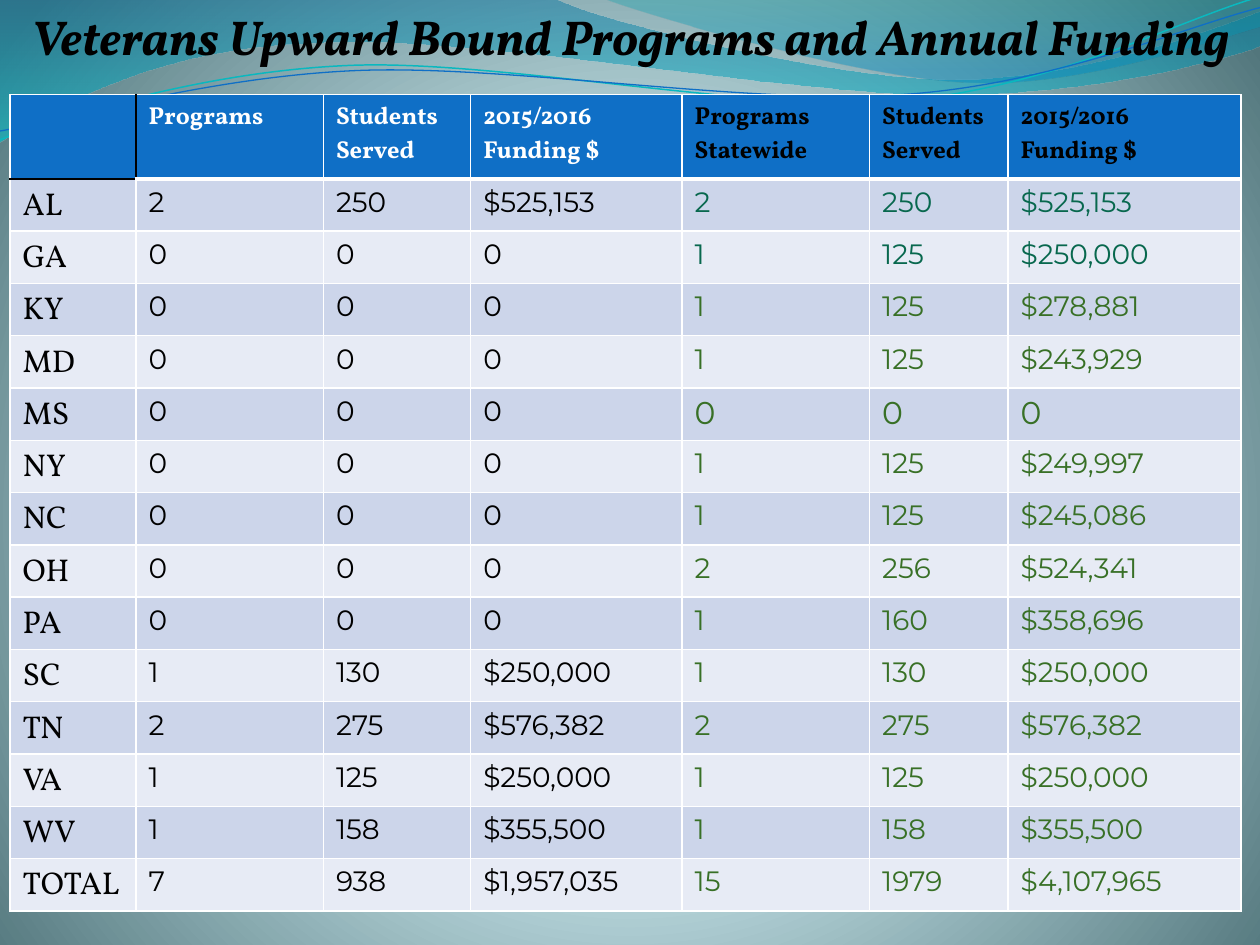
from math import cos, radians, sin

from lxml import etree
from pptx import Presentation
from pptx.dml.color import RGBColor
from pptx.enum.text import PP_ALIGN
from pptx.oxml import parse_xml
from pptx.oxml.ns import nsdecls, qn
from pptx.util import Inches, Pt

CENTER = PP_ALIGN.CENTER
LEFT = PP_ALIGN.LEFT
WIDTH, HEIGHT = 10, 7.5
SERIF, SANS = "Vollkorn", "Montserrat"
BLACK, WHITE, BLUE = "000000", "FFFFFF", "0F6FC6"
BANDS = ("CCD5EA", "E7EBF5")
TEAL, GREEN = "08684E", "387026"
LINE_TILT = 357.3

COLUMNS = (1, 1.49, 1.17, 1.68, 1.49, 1.1, 1.85)
HEADER_SHARE = 0.67 / 6.48
HEADINGS = ("", "Programs", "Students\nServed", "2015/2016\nFunding $",
            "Programs\nStatewide", "Students\nServed", "2015/2016\nFunding $")
STATES = (
    ("AL", "2", "250", "$525,153", "2", "250", "$525,153"),
    ("GA", "0", "0", "0", "1", "125", "$250,000"),
    ("KY", "0", "0", "0", "1", "125", "$278,881"),
    ("MD", "0", "0", "0", "1", "125", "$243,929"),
    ("MS", "0", "0", "0", "0", "0", "0"),
    ("NY", "0", "0", "0", "1", "125", "$249,997"),
    ("NC", "0", "0", "0", "1", "125", "$245,086"),
    ("OH", "0", "0", "0", "2", "256", "$524,341"),
    ("PA", "0", "0", "0", "1", "160", "$358,696"),
    ("SC", "1", "130", "$250,000", "1", "130", "$250,000"),
    ("TN", "2", "275", "$576,382", "2", "275", "$576,382"),
    ("VA", "1", "125", "$250,000", "1", "125", "$250,000"),
    ("WV", "1", "158", "$355,500", "1", "158", "$355,500"),
    ("TOTAL", "7", "938", "$1,957,035", "15", "1979", "$4,107,965"),
)

LEFT_WAVE = ((0, 0), (4.4, -0.01),
             (4.76, 0.17, 6.64, 0.63, 7.58, 0.63), (8.53, 0.63, 9.58, 0.26, 10, 0.09),
             (10.01, 0.36), (9.83, 0.44, 8.7, 0.76, 7.46, 0.75),
             (6.22, 0.75, 3.82, 0.28, 2.57, 0.34), (1.29, 0.36, 0.46, 0.83, -0.01, 1.13),
             (0, 0))
RIGHT_WAVE = ((4.79, -0.01), (5.09, 0.11, 6.82, 0.62, 7.69, 0.65),
              (8.56, 0.69, 9.61, 0.32, 10, 0.21), (10, 0), (4.79, -0.01))
TEAL_LINE = ((0, 1.11), (0.48, 0.93, 1.58, 0.57, 2.77, 0.52),
             (3.95, 0.47, 5.93, 0.89, 7.13, 0.8), (8.33, 0.71, 9.38, 0.15, 9.98, -0.02))
BLUE_LINE = ((0, 1.04), (0.47, 0.96, 1.64, 0.61, 2.83, 0.56),
             (4.03, 0.51, 5.97, 0.84, 7.17, 0.75), (8.36, 0.67, 9.41, 0.21, 10, 0.06))


def color(value):
    """Turn a hex string into a colour."""
    return RGBColor.from_string(value)


def set_gradient(fill, element, stops, direction):
    """Give a fill gradient stops of position, colour and opacity in percent."""
    fill.gradient()
    stop_xml = "".join(
        f'<a:gs pos="{position * 1000}"><a:srgbClr val="{value}">'
        f'<a:alpha val="{opacity * 1000}"/></a:srgbClr></a:gs>'
        for position, value, opacity in stops)
    old = next(element.iter(qn("a:gradFill")))
    new = parse_xml(f'<a:gradFill {nsdecls("a")} rotWithShape="1">'
                    f'<a:gsLst>{stop_xml}</a:gsLst>{direction}</a:gradFill>')
    old.getparent().replace(old, new)


def write_text(frame, text, font, size, value, bold=False, italic=False, align=LEFT):
    """Write one formatted paragraph for each line of text."""
    frame.word_wrap = True
    for index, line in enumerate(text.split("\n")):
        paragraph = frame.add_paragraph() if index else frame.paragraphs[0]
        paragraph.alignment = align
        run = paragraph.add_run()
        run.text = line
        run.font.name, run.font.size = font, Pt(size)
        run.font.bold, run.font.italic = bold, italic
        run.font.color.rgb = color(value)


def local_point(point, box, rotation):
    """Express a slide point in the unrotated frame of a box."""
    left, top, width, height = box
    x, y = point[0] - left - width / 2, point[1] - top - height / 2
    angle = radians(-rotation)
    return (Inches(x * cos(angle) - y * sin(angle) + width / 2),
            Inches(x * sin(angle) + y * cos(angle) + height / 2))


def add_curve(slide, box, segments, closed=False, rotation=0):
    """Draw an outline of straight and cubic segments in the given box."""
    builder = slide.shapes.build_freeform()
    builder.add_line_segments([(Inches(1), Inches(1))], close=closed)
    shape = builder.convert_to_shape()
    shape.left, shape.top, shape.width, shape.height = map(Inches, box)
    shape.rotation = rotation
    shape.shadow.inherit = False
    outline = next(shape.element.iter(qn("a:path")))
    outline.set("w", str(shape.width))
    outline.set("h", str(shape.height))
    for child in list(outline):
        outline.remove(child)
    for index, segment in enumerate(segments):
        kind = "cubicBezTo" if len(segment) == 6 else "lnTo" if index else "moveTo"
        step = etree.SubElement(outline, qn(f"a:{kind}"))
        for point in zip(segment[::2], segment[1::2]):
            x, y = local_point(point, box, rotation)
            etree.SubElement(step, qn("a:pt"), x=str(x), y=str(y))
    if closed:
        etree.SubElement(outline, qn("a:close"))
    return shape


def add_waves(slide, box):
    """Draw the translucent waves and the two thin lines over them."""
    left, top, width, height = box
    waves = (
        ((left, top, width, height), LEFT_WAVE, ((0, "0074A1", 45), (100, "00C6CF", 55))),
        ((left + 4.8, top, 5.21, 0.7), RIGHT_WAVE, ((0, "00A1A9", 30), (80, "008BBF", 45))))
    for wave_box, segments, stops in waves:
        shape = add_curve(slide, wave_box, segments, closed=True)
        set_gradient(shape.fill, shape.element, stops, '<a:lin ang="5400000" scaled="1"/>')
        shape.line.fill.background()
    lines = (((left - 0.01, top + 0.23, width, 0.71), TEAL_LINE, "0AB8BF", 0.85),
             ((left - 0.01, top + 0.31, width + 0.01, 0.58), BLUE_LINE, BLUE, 0.75))
    for line_box, segments, value, weight in lines:
        shape = add_curve(slide, line_box, segments, rotation=LINE_TILT)
        shape.fill.background()
        shape.line.color.rgb = color(value)
        shape.line.width = Pt(weight)


def add_title(slide, box):
    """Place the slide title."""
    frame = slide.shapes.add_textbox(*map(Inches, box)).text_frame
    write_text(frame, "Veterans Upward Bound Programs and Annual Funding",
               SERIF, 28, BLACK, bold=True, italic=True, align=CENTER)


def style_cell(cell, fill, **edges):
    """Set the fill and borders of a cell, with white hairlines by default."""
    properties = cell._tc.get_or_add_tcPr()
    for side in "LRTB":
        value, width = edges.get(side, (WHITE, 1))
        line = etree.SubElement(properties, qn(f"a:ln{side}"), w=str(Pt(width)))
        solid = etree.SubElement(line, qn("a:solidFill"))
        etree.SubElement(solid, qn("a:srgbClr"), val=value)
    cell.fill.solid()
    cell.fill.fore_color.rgb = color(fill)
    cell.margin_bottom = 0


def fill_header(table):
    """Fill the heading row."""
    black_edge, thick_edge = (BLACK, 1), (WHITE, 3)
    for column, heading in enumerate(HEADINGS):
        cell = table.cell(0, column)
        if column == 0:
            style_cell(cell, BLUE, R=black_edge, B=black_edge)
            continue
        style_cell(cell, BLUE, L=black_edge if column == 1 else (WHITE, 1), B=thick_edge)
        write_text(cell.text_frame, heading, SERIF, 14, WHITE if column < 4 else BLACK, bold=True)


def fill_state(table, row, values):
    """Fill one state row: name, own programs, then statewide figures."""
    statewide = TEAL if row < 3 else GREEN
    for column, text in enumerate(values):
        cell = table.cell(row, column)
        top = (WHITE, 1)
        if row == 1:
            top = (WHITE, 3) if column else (BLACK, 1)
        style_cell(cell, BANDS[(row - 1) % 2], T=top)
        large = column == 0 or (values[0] == "MS" and column > 3)
        write_text(cell.text_frame, text, SANS if column else SERIF, 18 if large else 16,
                   statewide if column > 3 else BLACK)


def add_funding_table(slide, box):
    """Place the table of programs and funding by state."""
    width, height = box[2:]
    table = slide.shapes.add_table(len(STATES) + 1, len(COLUMNS), *map(Inches, box)).table
    table.first_row = table.horz_banding = False
    for column, share in zip(table.columns, COLUMNS):
        column.width = Inches(width * share / sum(COLUMNS))
    for index, row in enumerate(table.rows):
        share = (1 - HEADER_SHARE) / len(STATES) if index else HEADER_SHARE
        row.height = Inches(height * share)
    fill_header(table)
    for row, values in enumerate(STATES, 1):
        fill_state(table, row, values)


def main():
    """Build and save the slide."""
    presentation = Presentation()
    presentation.slide_width, presentation.slide_height = Inches(WIDTH), Inches(HEIGHT)
    slide = presentation.slides.add_slide(presentation.slide_layouts[6])
    set_gradient(slide.background.fill, slide.element,
                 ((0, "DEFBFF", 100), (25, "DDFAFF", 100), (100, "52767C", 100)),
                 '<a:path path="circle"><a:fillToRect l="10000" t="110000" '
                 'r="10000" b="100000"/></a:path>')
    add_waves(slide, (-0.01, -0.01, WIDTH + 0.02, 1.14))
    add_title(slide, (0, 0, WIDTH, 0.14 * HEIGHT))
    add_funding_table(slide, (0.08, 0.1 * HEIGHT, 9.77, 6.48))
    presentation.save("out.pptx")


if __name__ == "__main__":
    main()
